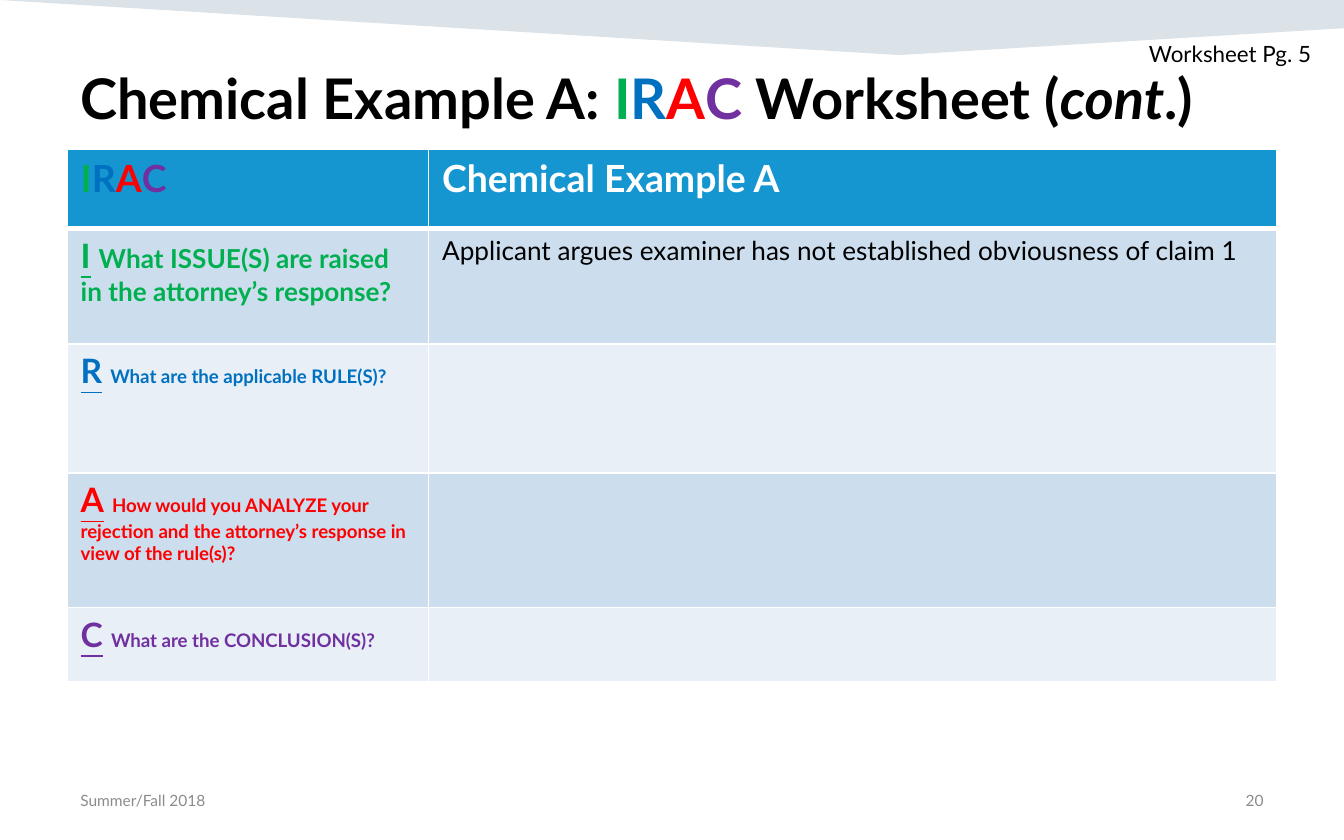
from dataclasses import dataclass

import pptx
import pptx.dml.color
import pptx.enum.text
import pptx.oxml
import pptx.oxml.ns
import pptx.util
from lxml import etree

WIDTH, HEIGHT = 10, 6.25
MARGIN = 0.05 * WIDTH
FONT = "Lato"
GREEN, BLUE, RED, PURPLE = "00B050", "0070C0", "FF0000", "7030A0"
BLACK, WHITE, GREY = "000000", "FFFFFF", "8C8C8C"
HEADER, BANDS = "1596D1", ("CCDDEE", "E8EFF7")
ALIGN = pptx.enum.text.PP_ALIGN
ANCHOR = pptx.enum.text.MSO_ANCHOR


@dataclass
class Run:
    text: str
    color: str = BLACK
    size: float | None = None
    underline: bool | None = None
    italic: bool | None = None


@dataclass
class Label:
    left: float
    top: float
    width: float
    height: float
    runs: list[Run]
    size: float
    bold: bool = False
    align: ALIGN = ALIGN.LEFT
    anchor: ANCHOR = ANCHOR.TOP
    wrap: bool = True


@dataclass
class Question:
    letter: str
    color: str
    text: str
    size: float
    height: float
    answer: str = ""


IRAC = [Run(c, color) for c, color in zip("IRAC", (GREEN, BLUE, RED, PURPLE))]

LABELS = [
    Label(8.45, 0.25, 1.41, 0.3, [Run("Worksheet Pg. 5")], 12, wrap=False),
    Label(MARGIN, 0.42, WIDTH - 2 * MARGIN, 0.69,
          [Run("Chemical Example A: "), *IRAC, Run(" Worksheet ("),
           Run("cont", italic=True), Run(".)")], 30, bold=True),
    Label(WIDTH - MARGIN - 2.33, 5.79, 2.33, 0.33, [Run("20", GREY)], 8.3,
          align=ALIGN.RIGHT, anchor=ANCHOR.MIDDLE),
    Label(MARGIN, 5.79, 2.33, 0.33, [Run("Summer/Fall 2018", GREY)], 8.3,
          anchor=ANCHOR.MIDDLE),
]

COLUMNS = (2.69, 6.31)
HEADER_HEIGHT = 0.59
QUESTIONS = [
    Question("I", GREEN, "What ISSUE(S) are raised in the attorney’s response?", 14, 0.86,
             "Applicant argues examiner has not established obviousness of claim 1"),
    Question("R", BLUE, "What are the applicable RULE(S)?", 10, 0.96),
    Question("A", RED, "How would you ANALYZE your rejection and the attorney’s "
             "response in view of the rule(s)?", 10, 1),
    Question("C", PURPLE, "What are the CONCLUSION(S)?", 10, 0.55),
]


def rgb(color: str) -> pptx.dml.color.RGBColor:
    return pptx.dml.color.RGBColor.from_string(color)


def inches(*lengths: float) -> list[int]:
    return [pptx.util.Inches(x) for x in lengths]


def write(tf, runs: list[Run], size: float, bold: bool = False) -> None:
    p = tf.paragraphs[0]
    p.font.name, p.font.size, p.font.bold = FONT, pptx.util.Pt(size), bold
    for run in runs:
        r = p.add_run()
        r.text = run.text
        # Named on the run too, so table and theme styles do not override it
        r.font.name, r.font.bold = FONT, bold
        r.font.size = pptx.util.Pt(run.size or size)
        r.font.color.rgb = rgb(run.color)
        r.font.underline, r.font.italic = run.underline, run.italic


def add_label(slide, label: Label) -> None:
    box = slide.shapes.add_textbox(
        *inches(label.left, label.top, label.width, label.height))
    tf = box.text_frame
    tf.word_wrap, tf.vertical_anchor = label.wrap, label.anchor
    write(tf, label.runs, label.size, label.bold)
    tf.paragraphs[0].alignment = label.align


def add_banner(slide) -> None:
    corners = [inches(*xy) for xy in ((WIDTH, 0), (WIDTH, 0.21), (6.69, 0.41))]
    builder = slide.shapes.build_freeform(0, 0)
    builder.add_line_segments(corners, close=True)
    sp = builder.convert_to_shape()
    sp.shadow.inherit = False
    sp.line.fill.background()
    sp.fill.solid()
    sp.fill.fore_color.rgb = rgb("164469")
    tint = next(sp.element.spPr.iter(pptx.oxml.ns.qn("a:srgbClr")))
    etree.SubElement(tint, pptx.oxml.ns.qn("a:alpha"), val="15000")


def fill_cell(cell, color: str, runs: list[Run], size: float, bold: bool) -> None:
    cell.fill.solid()
    cell.fill.fore_color.rgb = rgb(color)
    write(cell.text_frame, runs, size, bold)


def add_borders(frame) -> None:
    """White 1 pt rules, with a 3 pt rule between the header and the body."""
    for i, row in enumerate(frame.element.iter(pptx.oxml.ns.qn("a:tr"))):
        points = {"L": 1, "R": 1, "T": 3 if i == 1 else 1, "B": 3 if i == 0 else 1}
        for props in row.iter(pptx.oxml.ns.qn("a:tcPr")):
            for place, (side, width) in enumerate(points.items()):
                props.insert(place, pptx.oxml.parse_xml(
                    f'<a:ln{side} {pptx.oxml.ns.nsdecls("a")} w="{pptx.util.Pt(width)}">'
                    f'<a:solidFill><a:srgbClr val="{WHITE}"/></a:solidFill></a:ln{side}>'))


def add_worksheet(slide) -> None:
    heights = [HEADER_HEIGHT, *(q.height for q in QUESTIONS)]
    frame = slide.shapes.add_table(
        len(heights), len(COLUMNS),
        *inches(MARGIN, 1.11, sum(COLUMNS), sum(heights)))
    table = frame.table
    for column, width in zip(table.columns, inches(*COLUMNS)):
        column.width = width
    for row, height in zip(table.rows, inches(*heights)):
        row.height = height

    # Header row
    fill_cell(table.cell(0, 0), HEADER, IRAC, 20, True)
    fill_cell(table.cell(0, 1), HEADER, [Run("Chemical Example A", WHITE)], 20, True)

    # One banded row per question
    for i, q in enumerate(QUESTIONS):
        band = BANDS[i % 2]
        prompt = [Run(q.letter, q.color, 18, underline=True),
                  Run(" ", q.color, 18), Run(q.text, q.color)]
        answer = [Run(q.answer)] if q.answer else []
        fill_cell(table.cell(i + 1, 0), band, prompt, q.size, True)
        fill_cell(table.cell(i + 1, 1), band, answer, 14, False)
    add_borders(frame)


def main() -> None:
    prs = pptx.Presentation()
    prs.slide_width, prs.slide_height = inches(WIDTH, HEIGHT)
    slide = prs.slides.add_slide(prs.slide_layouts[6])
    add_banner(slide)
    add_worksheet(slide)
    for label in LABELS:
        add_label(slide, label)
    prs.save("out.pptx")


if __name__ == "__main__":
    main()
